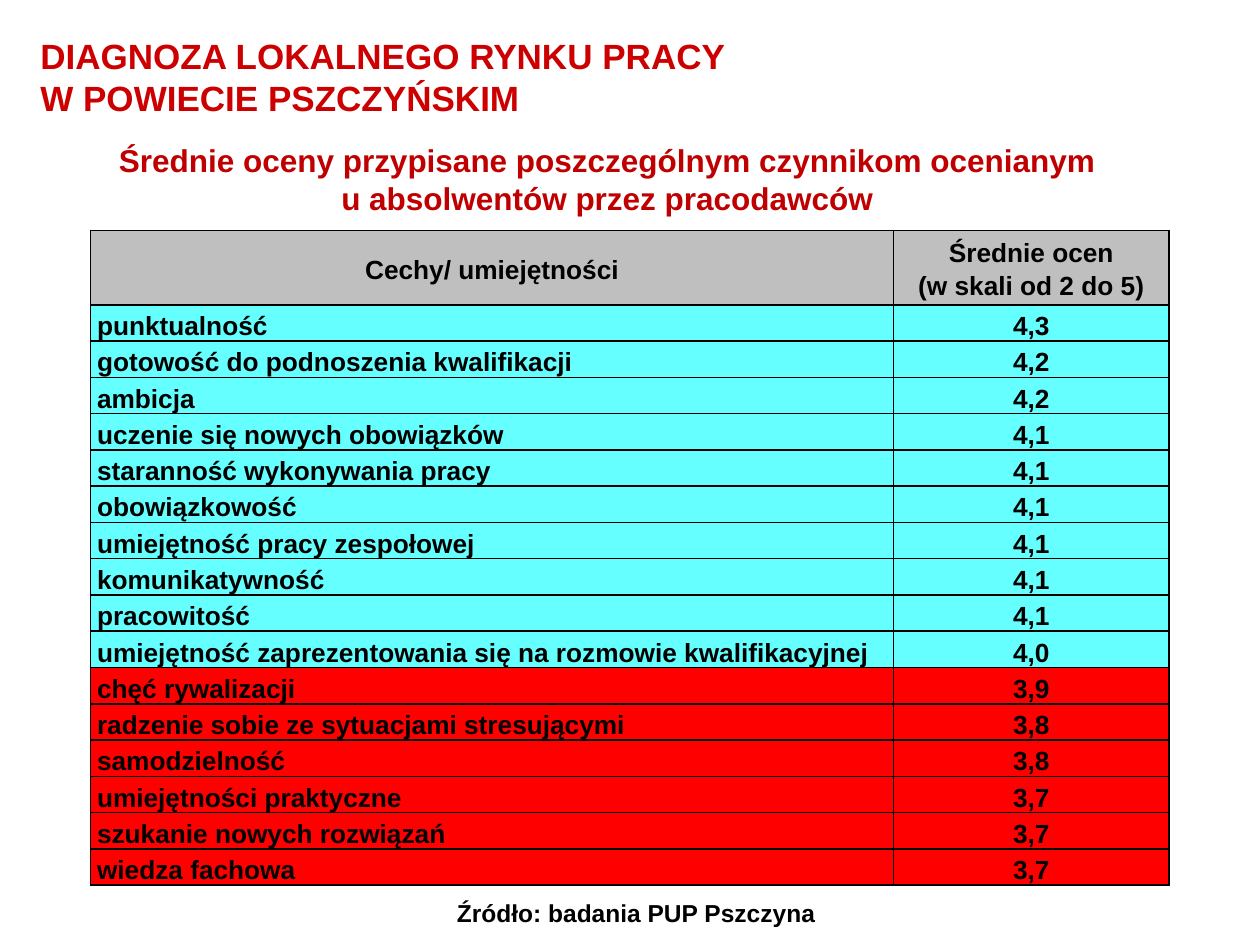
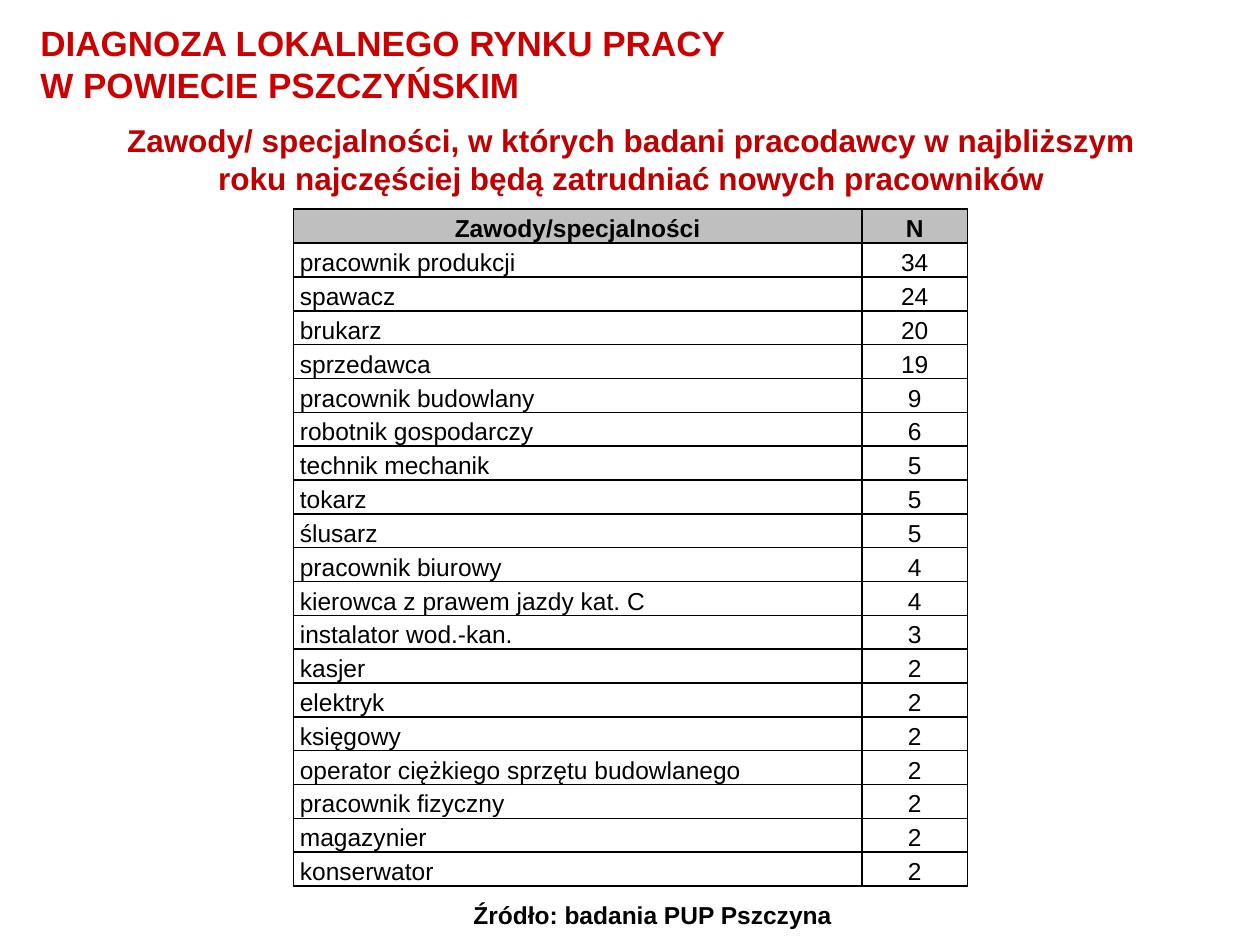
from lxml import etree
from pptx import Presentation
from pptx import util as u
from pptx.dml import color
from pptx.enum import text
from pptx.oxml import ns

FONT = "Arial"
BLACK, TITLE_RED, SUBTITLE_RED = "000000", "CC0000", "C00000"
GRAY, CYAN, RED = "BFBFBF", "66FFFF", "FF0000"
LEFT, CENTER = text.PP_ALIGN.LEFT, text.PP_ALIGN.CENTER
TITLE = "DIAGNOZA LOKALNEGO RYNKU PRACY\nW POWIECIE PSZCZYŃSKIM"
SOURCE = "Źródło: badania PUP Pszczyna"
PASSING_SCORE = "4,0"

TRAITS = [
    ("punktualność", "4,3"),
    ("gotowość do podnoszenia kwalifikacji", "4,2"),
    ("ambicja", "4,2"),
    ("uczenie się nowych obowiązków", "4,1"),
    ("staranność wykonywania pracy", "4,1"),
    ("obowiązkowość", "4,1"),
    ("umiejętność pracy zespołowej", "4,1"),
    ("komunikatywność", "4,1"),
    ("pracowitość", "4,1"),
    ("umiejętność zaprezentowania się na rozmowie kwalifikacyjnej", "4,0"),
    ("chęć rywalizacji", "3,9"),
    ("radzenie sobie ze sytuacjami stresującymi", "3,8"),
    ("samodzielność", "3,8"),
    ("umiejętności praktyczne", "3,7"),
    ("szukanie nowych rozwiązań", "3,7"),
    ("wiedza fachowa", "3,7"),
]
OCCUPATIONS = [
    ("pracownik produkcji", 34),
    ("spawacz", 24),
    ("brukarz", 20),
    ("sprzedawca", 19),
    ("pracownik budowlany", 9),
    ("robotnik gospodarczy", 6),
    ("technik mechanik", 5),
    ("tokarz", 5),
    ("ślusarz", 5),
    ("pracownik biurowy", 4),
    ("kierowca z prawem jazdy kat. C", 4),
    ("instalator wod.-kan.", 3),
    ("kasjer", 2),
    ("elektryk", 2),
    ("księgowy", 2),
    ("operator ciężkiego sprzętu budowlanego", 2),
    ("pracownik fizyczny", 2),
    ("magazynier", 2),
    ("konserwator", 2),
]


def rgb(value):
    """Turn a hex string into a colour."""
    return color.RGBColor.from_string(value)


def write(frame, words, size, hex_color, align, bold=True, spacing=None):
    """Fill a text frame and format each of its paragraphs."""
    frame.text = words
    for paragraph in frame.paragraphs:
        paragraph.alignment = align
        paragraph.line_spacing = spacing
        font = paragraph.font
        font.name, font.size, font.bold = FONT, u.Pt(size), bold
        font.color.rgb = rgb(hex_color)


def add_title(slide, top):
    """Place the shared heading in the title placeholder."""
    title = slide.shapes.title
    title.left, title.top = u.Inches(0.22), u.Inches(top)
    title.width, title.height = u.Inches(7.72), u.Inches(0.77)
    frame = title.text_frame
    frame.vertical_anchor = text.MSO_ANCHOR.TOP
    frame.auto_size = text.MSO_AUTO_SIZE.NONE
    write(frame, TITLE, 20, TITLE_RED, LEFT)


def add_text(slide, box, words, size, hex_color, wrap=True):
    """Add a centred bold text box."""
    shape = slide.shapes.add_textbox(*map(u.Inches, box))
    shape.text_frame.word_wrap = wrap
    write(shape.text_frame, words, size, hex_color, CENTER)


def add_borders(cell):
    """Draw a thin black line on every side of a cell."""
    properties = cell._tc.get_or_add_tcPr()
    for side in ("a:lnL", "a:lnR", "a:lnT", "a:lnB"):
        line = etree.SubElement(properties, ns.qn(side), w=str(u.Pt(1)))
        fill = etree.SubElement(line, ns.qn("a:solidFill"))
        etree.SubElement(fill, ns.qn("a:srgbClr"), val=BLACK)


def fill_cell(cell, words, size, align, bold, fill, anchor):
    """Write and format one table cell."""
    cell.margin_left = cell.margin_right = u.Inches(0.05)
    cell.margin_top = cell.margin_bottom = 0
    cell.vertical_anchor = anchor
    write(cell.text_frame, words, size, BLACK, align, bold, 1.15)
    add_borders(cell)
    if fill:
        cell.fill.solid()
        cell.fill.fore_color.rgb = rgb(fill)
    else:
        cell.fill.background()


def add_ranking(slide, box, header, rows, value_width, header_height, size,
                bold=False, row_fill=lambda value: None,
                header_anchor=text.MSO_ANCHOR.BOTTOM):
    """Add a table of names and values under a gray header row."""
    _, _, width, height = box
    table = slide.shapes.add_table(len(rows) + 1, 2, *map(u.Inches, box)).table
    table.horz_banding = table.first_row = False
    table.columns[0].width = u.Inches(width - value_width)
    table.columns[1].width = u.Inches(value_width)
    table.rows[0].height = u.Inches(header_height)
    for cell, words in zip(table.rows[0].cells, header):
        fill_cell(cell, words, size, CENTER, True, GRAY, header_anchor)
    for number, row in enumerate(rows, 1):
        table.rows[number].height = u.Inches((height - header_height) / len(rows))
        for cell, value, align in zip(table.rows[number].cells, row, (LEFT, CENTER)):
            fill_cell(cell, str(value), size, align, bold, row_fill(row[1]),
                      text.MSO_ANCHOR.BOTTOM)


def add_slide(presentation, title_top, subtitle, subtitle_box, source_box):
    """Add a slide with the shared heading, a subtitle and the source line."""
    slide = presentation.slides.add_slide(presentation.slide_layouts[5])
    add_title(slide, title_top)
    add_text(slide, subtitle_box, subtitle, 18, SUBTITLE_RED)
    add_text(slide, source_box, SOURCE, 14, BLACK, wrap=False)
    return slide


def add_traits_slide(presentation):
    """Show the average scores employers gave to graduates."""
    slide = add_slide(
        presentation, 0.22,
        "Średnie oceny przypisane poszczególnym czynnikom ocenianym\v"
        "u absolwentów przez pracodawców",
        (0.66, 1.07, 8.32, 0.71), (3.52, 7.08, 3.06, 0.34))
    add_ranking(
        slide, (0.72, 1.83, 8.56, 5.19),
        ("Cechy/ umiejętności", "Średnie ocen\n(w skali od 2 do 5)"), TRAITS,
        value_width=2.19, header_height=0.59, size=15, bold=True,
        row_fill=lambda score: CYAN if score >= PASSING_SCORE else RED,
        header_anchor=text.MSO_ANCHOR.MIDDLE)


def add_occupations_slide(presentation):
    """Show the occupations in which employers plan to hire."""
    slide = add_slide(
        presentation, 0.12,
        "Zawody/ specjalności, w których badani pracodawcy w najbliższym "
        "roku najczęściej będą zatrudniać nowych pracowników",
        (0.89, 0.91, 8.24, 0.71), (3.65, 7.09, 3.06, 0.34))
    add_ranking(
        slide, (2.33, 1.66, 5.35, 5.37), ("Zawody/specjalności", "N"),
        OCCUPATIONS, value_width=0.84, header_height=0.27, size=14)


def main():
    """Build and save the presentation."""
    presentation = Presentation()
    presentation.slide_width = u.Inches(10)
    presentation.slide_height = u.Inches(7.5)
    add_traits_slide(presentation)
    add_occupations_slide(presentation)
    presentation.save("out.pptx")


if __name__ == "__main__":
    main()
